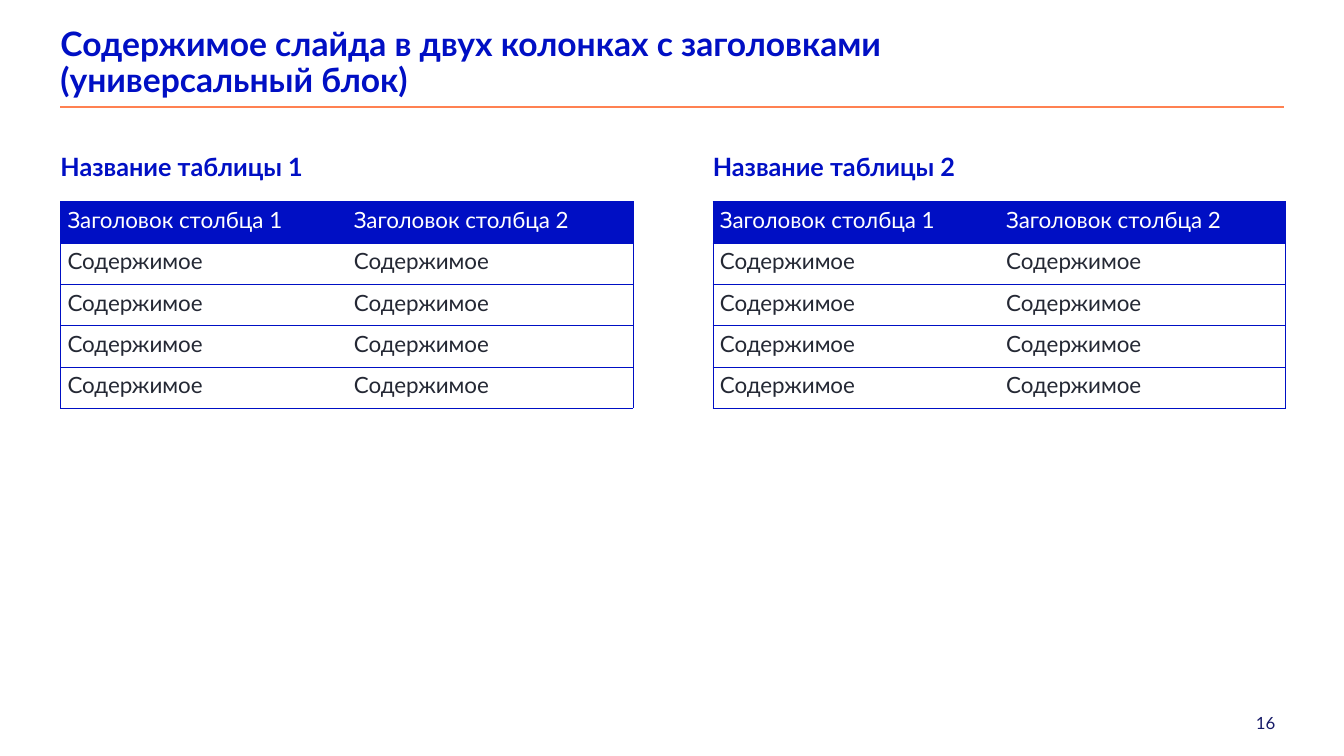
from lxml.etree import SubElement
from pptx import Presentation
from pptx.dml.color import RGBColor
from pptx.enum.shapes import MSO_CONNECTOR as Connector
from pptx.enum.text import MSO_ANCHOR as Anchor, PP_ALIGN as Align
from pptx.oxml.ns import qn
from pptx.util import Pt

PX = 9144
BLUE, ORANGE, NAVY, DARK, WHITE = "000FC4", "FF8151", "171B68", "242834", "FFFFFF"
LEFT, TOP, ROW_HEIGHT, COLUMN_WIDTH = 60, 200, 41, 284
BLOCK_WIDTH, BLOCK_STEP = 567, 647
HEADER = ["Заголовок столбца 1", "Заголовок столбца 2"]
ROWS = [HEADER] + [["Содержимое"] * 2] * 4


def px(*lengths):
    """Turn pixel lengths into EMU."""
    return [length * PX for length in lengths]


def color(value):
    """Turn a hex string into a colour."""
    return RGBColor.from_string(value)


def set_attributes(target, values):
    """Set every attribute named in a dict of format values."""
    for name, value in values.items():
        setattr(target, name, value)


def write(frame, text, size, hue, bold=False, **paragraph_format):
    """Put one formatted paragraph into a text frame."""
    paragraph = frame.paragraphs[0]
    set_attributes(paragraph, paragraph_format)
    run = paragraph.add_run()
    run.text = text
    set_attributes(run.font, {"name": "Lato", "size": Pt(size), "bold": bold})
    run.font.color.rgb = color(hue)


def add_text(slide, box, text, size, hue, anchor=Anchor.TOP, **text_format):
    """Add a wrapped text box without insets."""
    frame = slide.shapes.add_textbox(*px(*box)).text_frame
    set_attributes(frame, {
        "word_wrap": True, "vertical_anchor": anchor,
        "margin_left": 0, "margin_right": 0, "margin_top": 0, "margin_bottom": 0,
    })
    write(frame, text, size, hue, **text_format)


def add_rule(slide, start, end, hue, width):
    """Add a straight line without a shadow."""
    line = slide.shapes.add_connector(Connector.STRAIGHT, *px(*start, *end))
    line.line.color.rgb = color(hue)
    line.line.width = Pt(width)
    SubElement(line._element.spPr, qn("a:effectLst"))


def set_borders(cell, visible, hue, width):
    """Draw the visible sides of a cell and hide the others."""
    properties = cell._tc.get_or_add_tcPr()
    for side in "LRTB":
        border = SubElement(properties, qn(f"a:ln{side}"), w=str(Pt(width)))
        if side in visible:
            fill = SubElement(border, qn("a:solidFill"))
            SubElement(fill, qn("a:srgbClr"), val=hue)
        else:
            SubElement(border, qn("a:noFill"))


def format_cell(cell, text, is_header, sides):
    """Fill, frame and write one table cell."""
    set_borders(cell, sides, BLUE, 0.5)
    if is_header:
        cell.fill.solid()
        cell.fill.fore_color.rgb = color(BLUE)
    else:
        cell.fill.background()
    set_attributes(cell, dict(zip(("margin_left", "margin_right"), px(7, 7))))
    write(cell.text_frame, text, 16, WHITE if is_header else DARK)


def add_grid(slide, left, top, rows):
    """Add a table with a coloured header and an outer frame."""
    columns = len(rows[0])
    box = px(left, top, COLUMN_WIDTH * columns, ROW_HEIGHT * len(rows))
    table = slide.shapes.add_table(len(rows), columns, *box).table
    set_attributes(table, {"first_row": False, "horz_banding": False})
    for row_index, row in enumerate(rows):
        table.rows[row_index].height = ROW_HEIGHT * PX
        for column_index, text in enumerate(row):
            sides = "TB" + "L" * (column_index == 0) + "R" * (column_index == columns - 1)
            format_cell(table.cell(row_index, column_index), text, row_index == 0, sides)


def main():
    """Build the slide with two titled tables."""
    presentation = Presentation()
    width, height = px(1333, 750)
    set_attributes(presentation, {"slide_width": width, "slide_height": height})
    slide = presentation.slides.add_slide(presentation.slide_layouts[6])
    add_rule(slide, (LEFT, 106), (1273, 106), ORANGE, 1.25)
    add_text(slide, (1023, 707, 242, 20), "16", 12, NAVY, alignment=Align.RIGHT)
    add_text(slide, (LEFT, 45, 1051, 36),
             "Содержимое слайда в двух колонках с заголовками (универсальный блок)",
             24, BLUE, Anchor.MIDDLE, bold=True, line_spacing=0.9)
    for index in range(2):
        left = LEFT + index * BLOCK_STEP
        add_grid(slide, left, TOP, ROWS)
        add_text(slide, (left, 147, BLOCK_WIDTH, 69), f"Название таблицы {index + 1}",
                 18, BLUE, bold=True, line_spacing=1.1, space_after=Pt(12))
    presentation.save("out.pptx")


if __name__ == "__main__":
    main()
